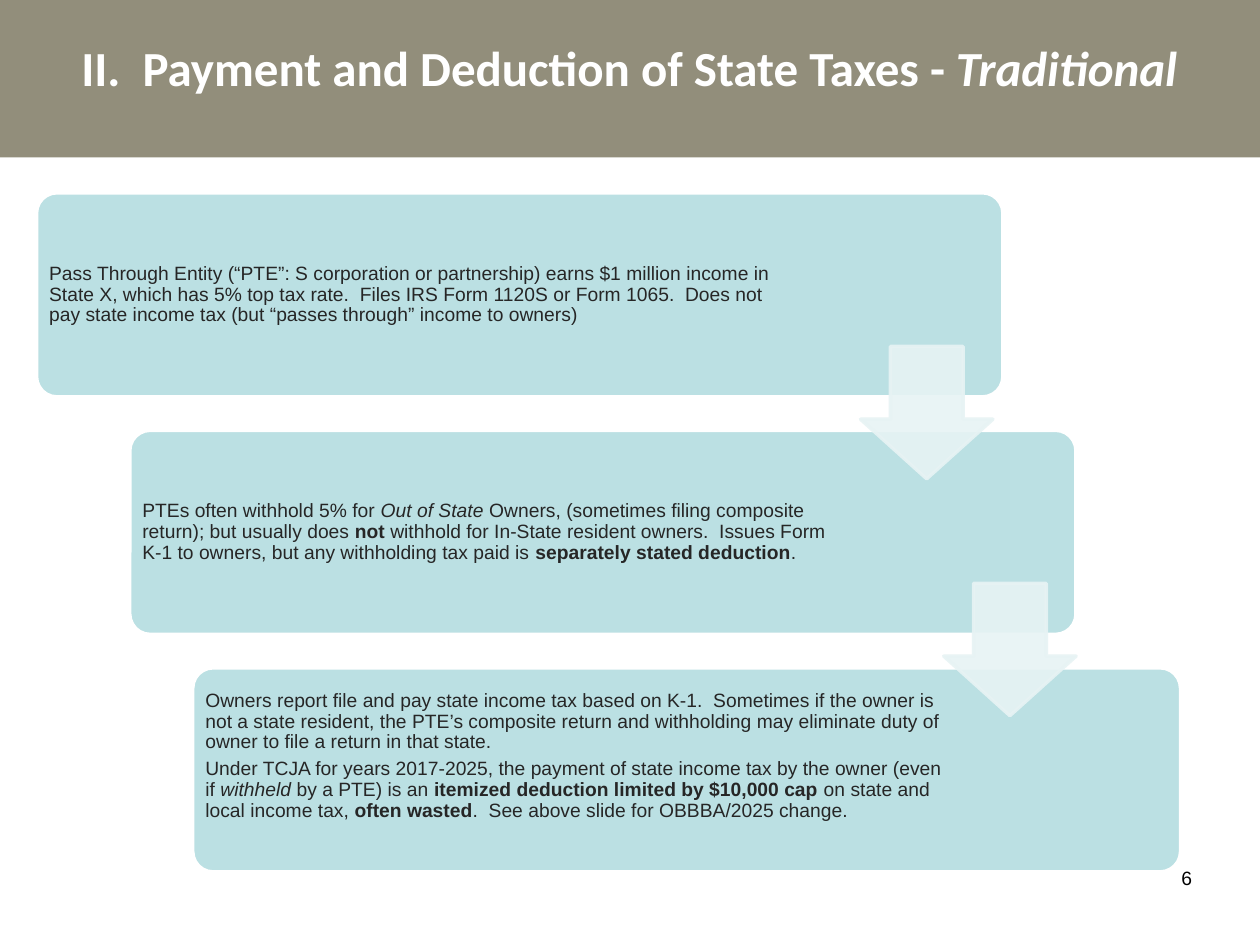
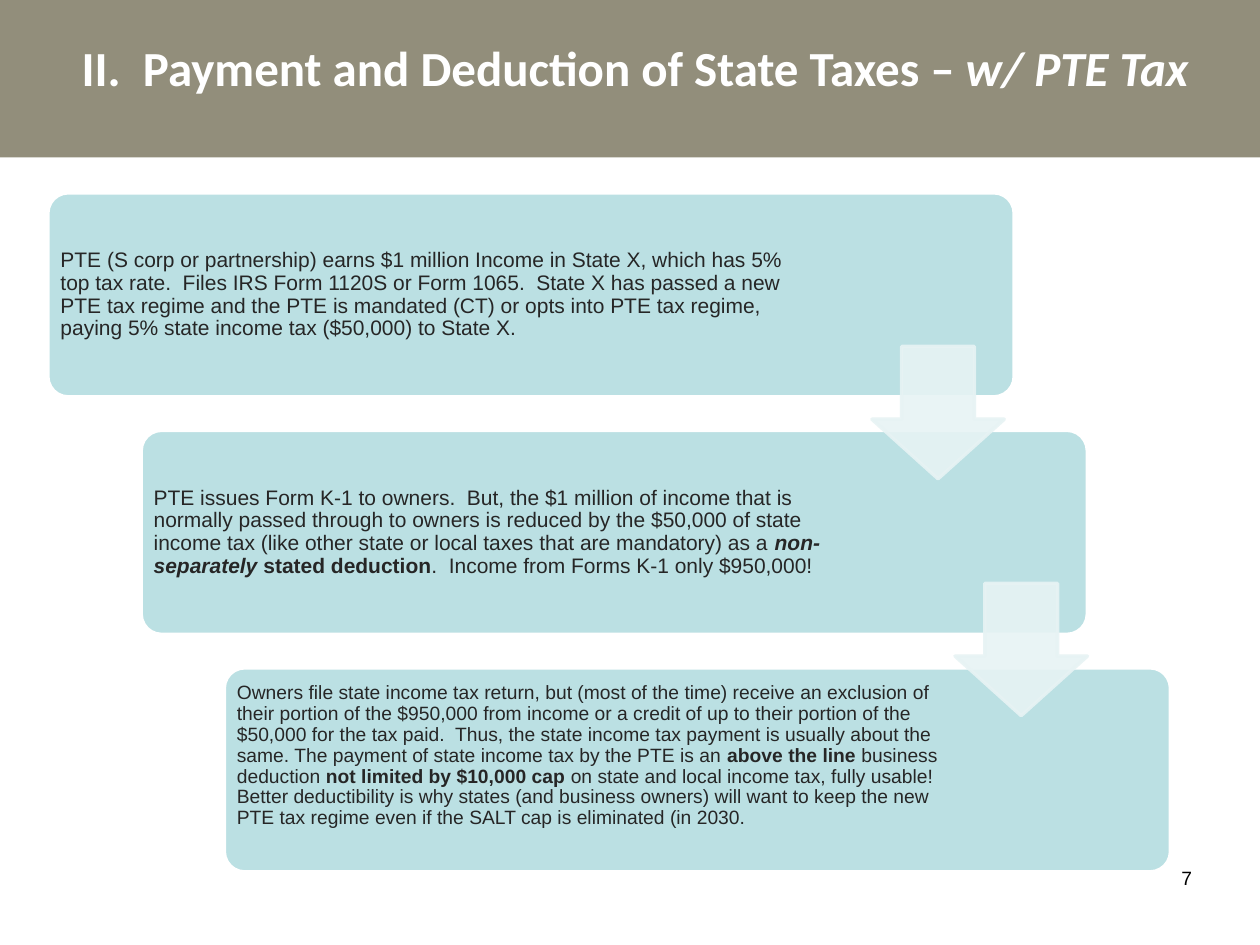
from dataclasses import dataclass

from pptx import Presentation
from pptx.dml.color import RGBColor
from pptx.enum.shapes import MSO_SHAPE
from pptx.enum.text import MSO_ANCHOR, PP_ALIGN
from pptx.oxml import parse_xml
from pptx.oxml.ns import nsdecls, qn
from pptx.util import Inches, Pt


@dataclass(frozen=True)
class Theme:
    band: RGBColor = RGBColor.from_string("928E7B")
    panel: RGBColor = RGBColor.from_string("BBE0E3")
    arrow: RGBColor = RGBColor.from_string("E7F3F4")
    white: RGBColor = RGBColor.from_string("FFFFFF")
    body: RGBColor = RGBColor.from_string("262626")
    black: RGBColor = RGBColor.from_string("000000")
    title_font: str = "Calibri"
    body_font: str = "Arial"
    title_size: int = 28
    large_size: int = 12
    small_size: int = 11


theme = Theme()

PANEL_TOP, PANEL_HEIGHT, PANEL_STEP = 1.53, 1.62, 1.885
ARROW_TOP, ARROW_SIZE, ARROW_STEP = 2.75, 1.05, 1.88
ARROW_INSETS = (0.08, 0)  # distance from the right edge of the panel it leaves
TEXT_INSET = 0.05
EMPTY_LINE = 0.22  # room kept free below the text of the last panel

# Each panel: left, width, text width, right inset, type size, paragraphs.
# Each paragraph is a list of (text, style) runs; style holds b for bold, i for italic.
slides = [
    {
        "title": [("II.  Payment and Deduction of State Taxes - ", "b"), ("Traditional", "bi")],
        "title_box": (0.33, 0.25, 9.33, 0.83),
        "number": "6",
        "panels": [
            (0.29, 7.67, 5.89, 0, theme.small_size, [
                [("Pass Through Entity (“PTE”: S corporation or partnership) earns $1 million "
                  "income in State X, which has 5% top tax rate.  Files IRS Form 1120S or Form "
                  "1065.  Does not pay state income tax (but “passes through” income to "
                  "owners)", "")],
            ]),
            (1.03, 7.51, 5.7, TEXT_INSET, theme.small_size, [
                [("PTEs often withhold 5% for ", ""),
                 ("Out of State", "i"),
                 (" Owners, (sometimes filing composite return); but usually does ", ""),
                 ("not", "b"),
                 (" withhold for In-State resident owners.  Issues Form K-1 to owners, but any "
                  "withholding tax paid is ", ""),
                 ("separately stated deduction", "b"),
                 (".", "")],
            ]),
            (1.53, 7.84, 5.96, TEXT_INSET, theme.small_size, [
                [("Owners report file and pay state income tax based on K-1.  Sometimes if the "
                  "owner is not a state resident, the PTE’s composite return and withholding "
                  "may eliminate duty of owner to file a return in that state.", "")],
                [("Under TCJA for years 2017-2025, the payment of state income tax by the "
                  "owner (even if ", ""),
                 ("withheld", "i"),
                 (" by a PTE) is an ", ""),
                 ("itemized deduction limited by $10,000 cap", "b"),
                 (" on state and local income tax, ", ""),
                 ("often wasted", "b"),
                 (".  See above slide for OBBBA/2025 change.", "")],
            ]),
        ],
    },
    {
        "title": [("II.  Payment and Deduction of State Taxes – ", "b"), ("w/ PTE Tax", "bi")],
        "title_box": (0.25, 0.25, 9.58, 0.83),
        "number": "7",
        "panels": [
            (0.38, 7.67, 5.89, 0, theme.large_size, [
                [("PTE (S corp or partnership) earns $1 million Income in State X, which has 5% "
                  "top tax rate.  Files IRS Form 1120S or Form 1065.  State X has passed a new "
                  "PTE tax regime and the PTE is mandated (CT) or opts into PTE tax regime, "
                  "paying 5% state income tax ($50,000) to State X.", "")],
            ]),
            (1.12, 7.51, 5.7, TEXT_INSET, theme.large_size, [
                [("PTE issues Form K-1 to owners.  But, the $1 million of income that is "
                  "normally passed through to owners is reduced by the $50,000 of state income "
                  "tax (like other state or local taxes that are mandatory) as a ", ""),
                 ("non-separately", "bi"),
                 (" stated deduction", "b"),
                 (".  Income from Forms K-1 only $950,000!", "")],
            ]),
            (1.78, 7.51, 5.7, TEXT_INSET, theme.small_size, [
                [("Owners file state income tax return, but (most of the time) receive an "
                  "exclusion of their portion of the $950,000 from income or a credit of up to "
                  "their portion of the $50,000 for the tax paid.  Thus, the state income tax "
                  "payment is usually about the same. The payment of state income tax by the "
                  "PTE is an ", ""),
                 ("above the line ", "b"),
                 ("business deduction ", ""),
                 ("not limited by $10,000 cap ", "b"),
                 ("on state and local income tax, fully usable!  Better deductibility is why "
                  "states (and business owners) will want to keep the new PTE tax regime even "
                  "if the SALT cap is eliminated (in 2030.", "")],
            ]),
        ],
    },
]


def add_shape(slide, preset, box, fill, line=None, adjustments=(), opacity=100):
    """Add a flat preset shape; opacity (percent) applies to both fill and line."""
    shape = slide.shapes.add_shape(preset, *map(Inches, box))
    shape.shadow.inherit = False
    for index, value in enumerate(adjustments):
        shape.adjustments[index] = value
    shape.fill.solid()
    shape.fill.fore_color.rgb = fill
    if line is None:
        shape.line.fill.background()
    else:
        shape.line.color.rgb = line
        shape.line.width = Pt(2)
    if opacity < 100:
        for color in shape._element.spPr.iter(qn("a:srgbClr")):
            color.append(parse_xml(f'<a:alpha {nsdecls("a")} val="{opacity * 1000}"/>'))
    return shape


def add_text(slide, box, paragraphs, font, size, color, align=PP_ALIGN.LEFT):
    """Add a wrapping text box from paragraphs of (text, style) runs."""
    text_frame = slide.shapes.add_textbox(*map(Inches, box)).text_frame
    text_frame.word_wrap = True
    for index, runs in enumerate(paragraphs):
        paragraph = text_frame.add_paragraph() if index else text_frame.paragraphs[0]
        paragraph.alignment = align
        for text, style in runs:
            run = paragraph.add_run()
            run.text = text
            run.font.name = font
            run.font.size = Pt(size)
            run.font.color.rgb = color
            run.font.bold = "b" in style
            run.font.italic = "i" in style
    return text_frame


presentation = Presentation()
presentation.slide_width = Inches(10)
presentation.slide_height = Inches(7.5)

for content in slides:
    slide = presentation.slides.add_slide(presentation.slide_layouts[6])
    add_shape(slide, MSO_SHAPE.RECTANGLE, (0, 0, 10, 1.25), theme.band)
    add_text(slide, content["title_box"], [content["title"]],
             theme.title_font, theme.title_size, theme.white, PP_ALIGN.CENTER)
    add_text(slide, (9.14, 6.83, 0.42, 0.33), [[(content["number"], "")]],
             theme.body_font, theme.small_size, theme.black, PP_ALIGN.RIGHT)

    panels = content["panels"]
    for row, (left, width, text_width, right_inset, size, paragraphs) in enumerate(panels):
        top = PANEL_TOP + row * PANEL_STEP
        add_shape(slide, MSO_SHAPE.ROUNDED_RECTANGLE, (left, top, width, PANEL_HEIGHT),
                  theme.panel, theme.white, (0.1,))
        text_box = (left + 0.05, top + 0.05, text_width, PANEL_HEIGHT - 0.1)
        text_frame = add_text(slide, text_box, paragraphs, theme.body_font, size, theme.body)
        text_frame.vertical_anchor = MSO_ANCHOR.MIDDLE
        text_frame.margin_left = text_frame.margin_top = Inches(TEXT_INSET)
        text_frame.margin_right = Inches(right_inset)
        is_last = row == len(panels) - 1
        text_frame.margin_bottom = Inches(TEXT_INSET + (EMPTY_LINE if is_last else 0))
        for paragraph in text_frame.paragraphs:
            paragraph.line_spacing = 0.9
            paragraph.space_after = Pt(3.5)

    for row, inset in enumerate(ARROW_INSETS):
        left, width = panels[row][:2]
        arrow_box = (left + width - ARROW_SIZE - inset, ARROW_TOP + row * ARROW_STEP,
                     ARROW_SIZE, ARROW_SIZE)
        add_shape(slide, MSO_SHAPE.DOWN_ARROW, arrow_box, theme.arrow, theme.arrow,
                  (0.55, 0.45), opacity=90)

# The adjustments of a down arrow are head length first in the shape's own order.
for slide in presentation.slides:
    for shape in slide.shapes:
        if shape.has_text_frame and len(shape._element.xpath(".//a:prstGeom[@prst='downArrow']")):
            shape.adjustments[0], shape.adjustments[1] = 0.55, 0.45

presentation.save("out.pptx")
